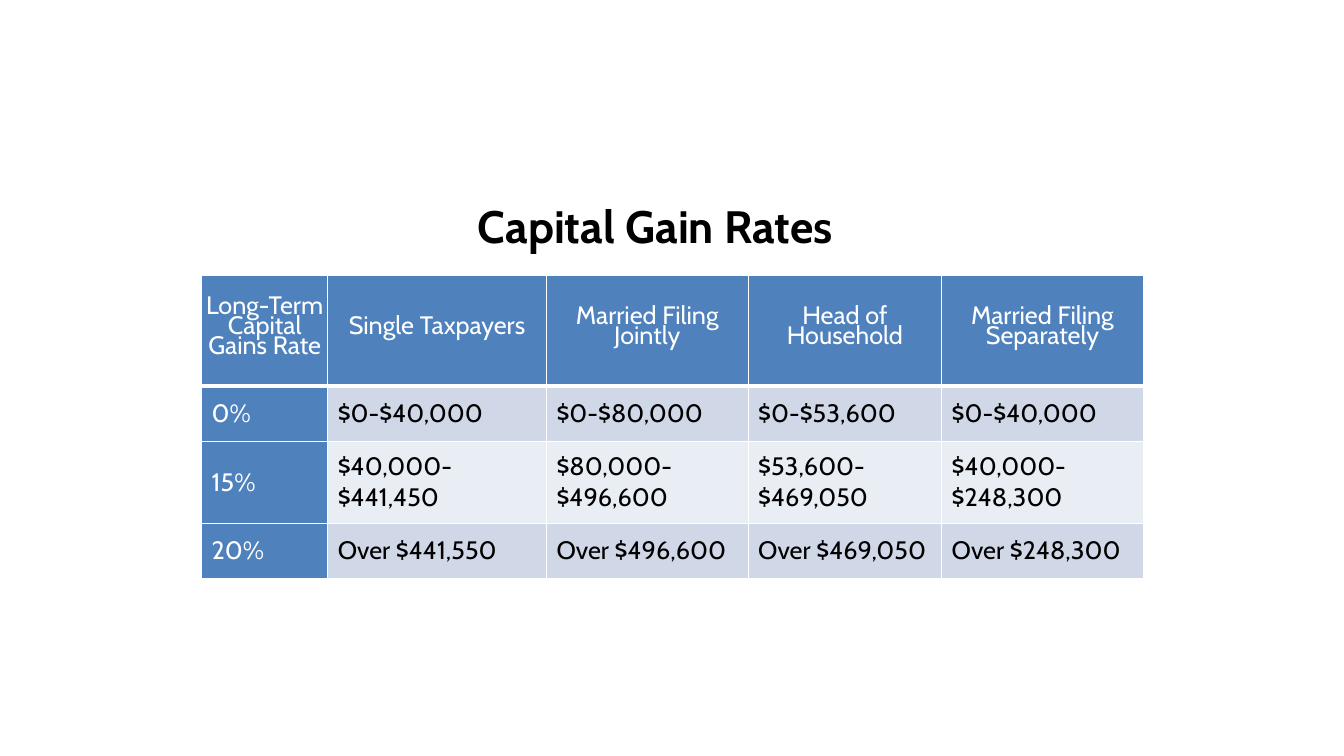
from pptx import Presentation
from pptx import util as u
from pptx.dml import color
from pptx.enum import text
from pptx.oxml import parse_xml
from pptx.oxml import ns

HUES = {"head": "4F81BD", "odd": "D0D8E8", "even": "E9EDF4",
        "white": "FFFFFF", "black": "000000"}
ROWS = [
    ["Long-Term Capital Gains Rate", "Single Taxpayers", "Married Filing Jointly",
     "Head of Household", "Married Filing Separately"],
    ["0%", "$0-$40,000", "$0-$80,000", "$0-$53,600", "$0-$40,000"],
    ["15%", "$40,000-$441,450", "$80,000-$496,600", "$53,600-$469,050",
     "$40,000-$248,300"],
    ["20%", "Over $441,550", "Over $496,600", "Over $469,050", "Over $248,300"],
]
WIDTHS = [1.25, 2.17, 2, 1.92, 2]
HEIGHTS = [1.1, 0.55, 0.81, 0.55]


class Deck:
    """Hold the style and the current slide, and draw its elements."""

    def __init__(self):
        self.show = Presentation()
        self.show.slide_width = u.Inches(13.33)
        self.show.slide_height = u.Inches(7.5)
        self.slide = self.show.slides.add_slide(self.show.slide_layouts[6])
        self.face = "Cabin"

    def hue(self, name):
        return color.RGBColor.from_string(HUES[name])

    def label(self, para, words, size, hue, bold=False):
        para.text = words
        font = para.font
        font.name, font.size, font.bold = self.face, u.Pt(size), bold
        font.color.rgb = self.hue(hue)

    def title(self, words, *place):
        frame = self.slide.shapes.add_textbox(*map(u.Inches, place)).text_frame
        frame.word_wrap = True
        frame.vertical_anchor = text.MSO_ANCHOR.MIDDLE
        para = frame.paragraphs[0]
        para.alignment = text.PP_ALIGN.CENTER
        self.label(para, words, 32.4, "black", True)

    def edge(self, cell, base):
        props = cell._tc.get_or_add_tcPr()
        for side, width in zip("LRTB", (1, 1, 1, base)):
            props.append(parse_xml(
                f'<a:ln{side} {ns.nsdecls("a")} w="{u.Pt(width)}"><a:solidFill>'
                f'<a:srgbClr val="{HUES["white"]}"/></a:solidFill></a:ln{side}>'))

    def cell(self, cell, words, row, col):
        head = row == 0
        self.edge(cell, 3 if head else 1)
        dark = head or col == 0
        fill = "head" if dark else "odd" if row % 2 else "even"
        cell.fill.solid()
        cell.fill.fore_color.rgb = self.hue(fill)
        cell.vertical_anchor = text.MSO_ANCHOR.MIDDLE
        gap = u.Inches(0 if head else 0.1)
        cell.margin_left = cell.margin_right = gap
        cell.margin_top = cell.margin_bottom = gap
        para = cell.text_frame.paragraphs[0]
        if head:
            para.alignment = text.PP_ALIGN.CENTER
            para.line_spacing = u.Pt(14.4)
        self.label(para, words, 18, "white" if dark else "black")

    def table(self, rows, widths, heights, left, top):
        size = map(u.Inches, (left, top, sum(widths), sum(heights)))
        grid = self.slide.shapes.add_table(len(rows), len(widths), *size).table
        for col, width in zip(grid.columns, widths):
            col.width = u.Inches(width)
        for row, height in zip(grid.rows, heights):
            row.height = u.Inches(height)
        for r, line in enumerate(rows):
            for c, words in enumerate(line):
                self.cell(grid.cell(r, c), words, r, c)


def main():
    deck = Deck()
    deck.table(ROWS, WIDTHS, HEIGHTS, 2, 2.73)
    deck.title("Capital Gain Rates", 2, 1.96, 9, 0.55)
    deck.show.save("out.pptx")


if __name__ == "__main__":
    main()
